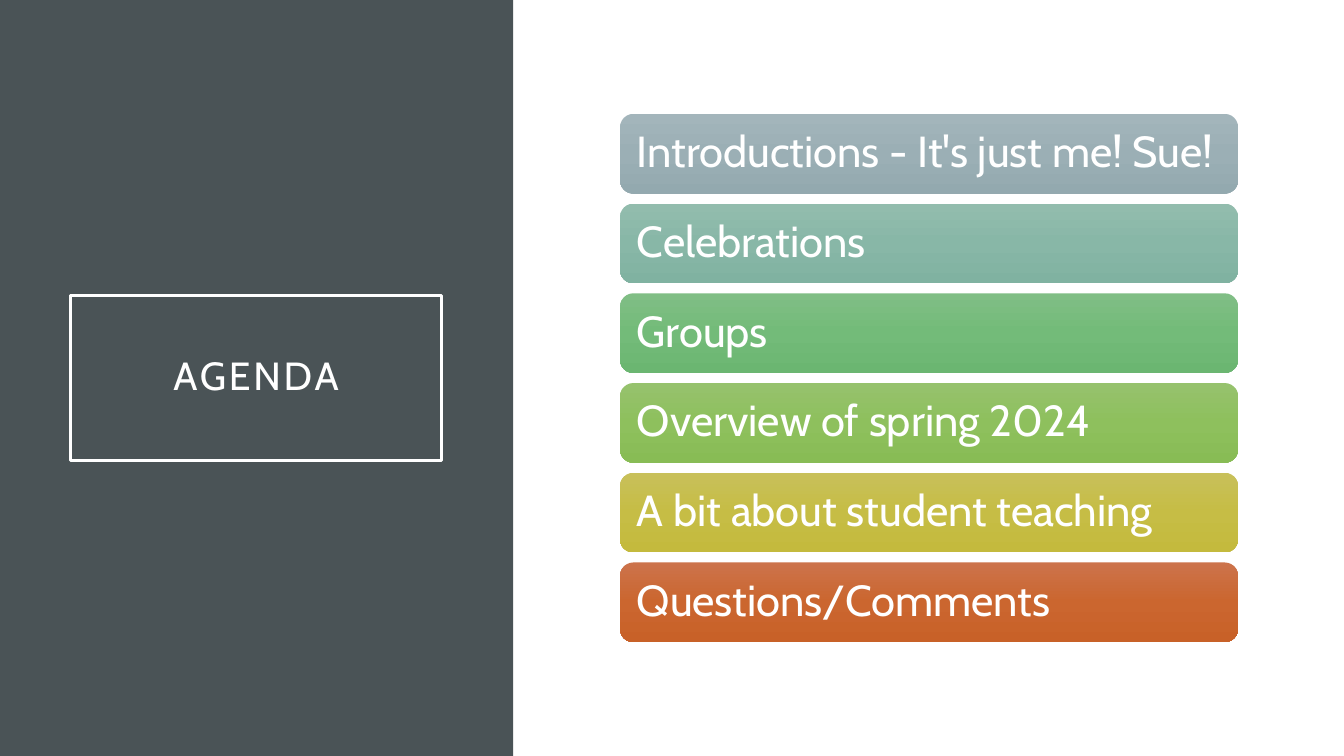
"""Build an agenda slide with a dark title panel and six gradient bars."""
import copy

import pptx
import pptx.dml.color
import pptx.enum.shapes
import pptx.enum.text
import pptx.oxml.ns
import pptx.util

Inches = pptx.util.Inches
Pt = pptx.util.Pt
KIND = pptx.enum.shapes.MSO_SHAPE
ALIGN = pptx.enum.text.PP_ALIGN

COLORS = {
    "panel": "4A5356",
    "white": "FFFFFF",
    "slate": ("A3B5BB", "9BAFB5", "93A9AF"),
    "teal": ("92BCAD", "88B7A7", "80B2A1"),
    "green": ("80BE85", "73BB79", "6BB671"),
    "lime": ("96C26D", "8EC05D", "88BC55"),
    "gold": ("C8C05A", "C6BD45", "C4BA3D"),
    "rust": ("CC734B", "CB662F", "C86128"),
}
ITEMS = [
    ("Introductions - It's just me! Sue!", "slate"),
    ("Celebrations", "teal"),
    ("Groups", "green"),
    ("Overview of spring 2024", "lime"),
    ("A bit about student teaching", "gold"),
    ("Questions/Comments", "rust"),
]


def rgb(value):
    return pptx.dml.color.RGBColor.from_string(value)


class Deck:
    font = "Cabin"

    def __init__(self, slide):
        self.slide = slide

    def shape(self, kind, left, top, width, height):
        box = self.slide.shapes.add_shape(
            kind, Inches(left), Inches(top), Inches(width), Inches(height))
        box.shadow.inherit = False
        box.line.fill.background()
        return box

    def label(self, box, text, size, align, inset):
        frame = box.text_frame
        frame.text = text
        frame.word_wrap = True
        frame.vertical_anchor = pptx.enum.text.MSO_ANCHOR.MIDDLE
        frame.margin_left = frame.margin_right = Inches(inset)
        frame.margin_top = frame.margin_bottom = Inches(inset)
        line = frame.paragraphs[0]
        line.alignment = align
        line.line_spacing = 0.9
        run = line.runs[0]
        run.font.name = self.font
        run.font.size = Pt(size)
        run.font.color.rgb = rgb(COLORS["white"])
        return run

    def panel(self, left, top, width, height):
        box = self.shape(KIND.RECTANGLE, left, top, width, height)
        box.fill.solid()
        box.fill.fore_color.rgb = rgb(COLORS["panel"])

    def title(self, text, left, top, width, height):
        box = self.shape(KIND.RECTANGLE, left, top, width, height)
        box.fill.background()
        box.line.color.rgb = rgb(COLORS["white"])
        box.line.width = Pt(2.5)
        run = self.label(box, text, 28, ALIGN.CENTER, 0.2)
        run._r.get_or_add_rPr().set("spc", "200")

    def bar(self, text, color, left, top, width, height):
        box = self.shape(KIND.ROUNDED_RECTANGLE, left, top, width, height)
        self.blend(box, COLORS[color])
        self.label(box, text, 31, ALIGN.LEFT, 0.13)

    def blend(self, box, shades):
        box.fill.gradient()
        box.fill.gradient_angle = 270
        stops = box._element.spPr.find(".//" + pptx.oxml.ns.qn("a:gsLst"))
        stops.insert(1, copy.deepcopy(stops[0]))
        for stop, shade, place in zip(box.fill.gradient_stops, shades, (0, 0.5, 1)):
            stop.color.rgb = rgb(shade)
            stop.position = place


def main():
    show = pptx.Presentation()
    show.slide_width = Inches(13.33)
    show.slide_height = Inches(7.5)
    deck = Deck(show.slides.add_slide(show.slide_layouts[6]))
    deck.panel(0, 0, 5.09, 7.5)
    deck.title("AGENDA", 0.7, 2.93, 3.68, 1.64)
    for row, (text, color) in enumerate(ITEMS):
        deck.bar(text, color, 6.15, 1.13 + 0.89 * row, 6.13, 0.79)
    show.save("out.pptx")


if __name__ == "__main__":
    main()
